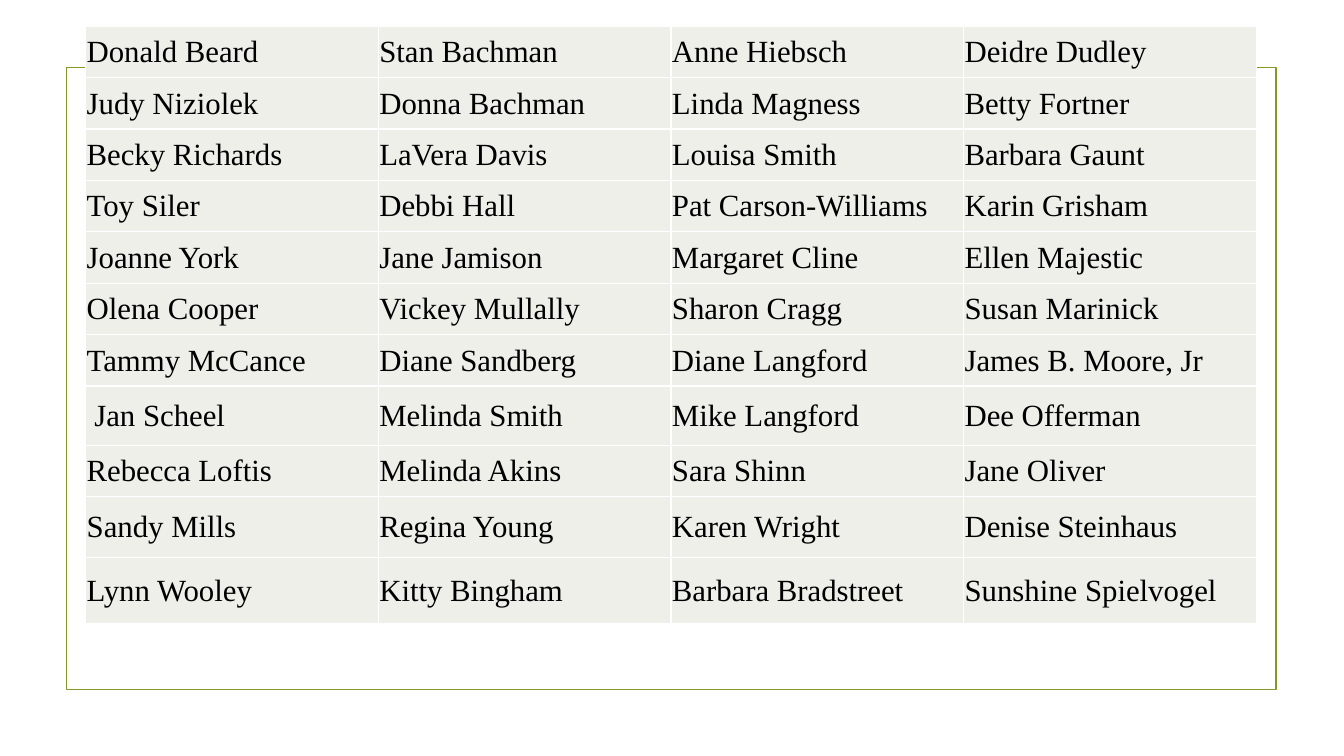
from dataclasses import dataclass

from lxml import etree
from pptx import Presentation, util as u
from pptx.dml.color import RGBColor
from pptx.enum import shapes, text
from pptx.oxml import ns

PX = 9144  # 100 px to the inch


@dataclass(frozen=True)
class Theme:
    font: str = "Times New Roman"
    size: float = 22
    ink: str = "000000"
    cell: str = "EDEFE8"
    rule: str = "FFFFFF"
    rule_pt: float = 1
    frame: str = "83992A"
    frame_pt: float = 1.25


THEME = Theme()
NAMES = [
    ["Donald Beard", "Stan Bachman", "Anne Hiebsch", "Deidre Dudley"],
    ["Judy Niziolek", "Donna Bachman", "Linda Magness", "Betty Fortner"],
    ["Becky Richards", "LaVera Davis", "Louisa Smith", "Barbara Gaunt"],
    ["Toy Siler", "Debbi Hall", "Pat Carson-Williams", "Karin Grisham"],
    ["Joanne York", "Jane Jamison", "Margaret Cline", "Ellen Majestic"],
    ["Olena Cooper", "Vickey Mullally", "Sharon Cragg", "Susan Marinick"],
    ["Tammy McCance", "Diane Sandberg", "Diane Langford", "James B. Moore, Jr"],
    [" Jan Scheel", "Melinda Smith", "Mike Langford", "Dee Offerman"],
    ["Rebecca Loftis", "Melinda Akins", "Sara Shinn", "Jane Oliver"],
    ["Sandy Mills", "Regina Young", "Karen Wright", "Denise Steinhaus"],
    ["Lynn Wooley", "Kitty Bingham", "Barbara Bradstreet", "Sunshine Spielvogel"],
]
ROWS = [51] * 7 + [59, 51, 60, 66]


def px(*sizes):
    return [u.Emu(size * PX) for size in sizes]


def color(code):
    return RGBColor.from_string(code)


def frame(slide, box):
    rect = slide.shapes.add_shape(shapes.MSO_SHAPE.RECTANGLE, *px(*box))
    rect.shadow.inherit = False
    rect.fill.background()
    rect.line.color.rgb = color(THEME.frame)
    rect.line.width = u.Pt(THEME.frame_pt)


def edge(cell):
    """Rule all four sides of a cell; call before setting its fill."""
    props = cell._tc.get_or_add_tcPr()
    for side in ("lnL", "lnR", "lnT", "lnB"):
        line = etree.SubElement(props, ns.qn("a:" + side), w=str(u.Pt(THEME.rule_pt)))
        fill = etree.SubElement(line, ns.qn("a:solidFill"))
        etree.SubElement(fill, ns.qn("a:srgbClr"), val=THEME.rule)


def fill_cell(cell, name):
    edge(cell)
    cell.fill.solid()
    cell.fill.fore_color.rgb = color(THEME.cell)
    cell.margin_left, cell.margin_top, cell.margin_right, cell.margin_bottom = px(1, 1, 1, 0)
    cell.vertical_anchor = text.MSO_ANCHOR.MIDDLE
    cell.text = name
    font = cell.text_frame.paragraphs[0].font
    font.name, font.size = THEME.font, u.Pt(THEME.size)
    font.color.rgb = color(THEME.ink)


def roster(slide, box):
    cols = len(NAMES[0])
    table = slide.shapes.add_table(len(NAMES), cols, *px(*box)).table
    table.first_row = table.horz_banding = False
    for col in table.columns:
        col.width = u.Emu(box[2] * PX // cols)
    for row, high, names in zip(table.rows, ROWS, NAMES):
        row.height = u.Emu(high * PX)
        for cell, name in zip(row.cells, names):
            fill_cell(cell, name)


def main():
    deck = Presentation()
    deck.slide_width, deck.slide_height = px(1333, 750)
    slide = deck.slides.add_slide(deck.slide_layouts[6])
    frame(slide, (66, 67, 1200, 617))
    roster(slide, (85, 26, 1161, sum(ROWS)))
    deck.save("out.pptx")


if __name__ == "__main__":
    main()
